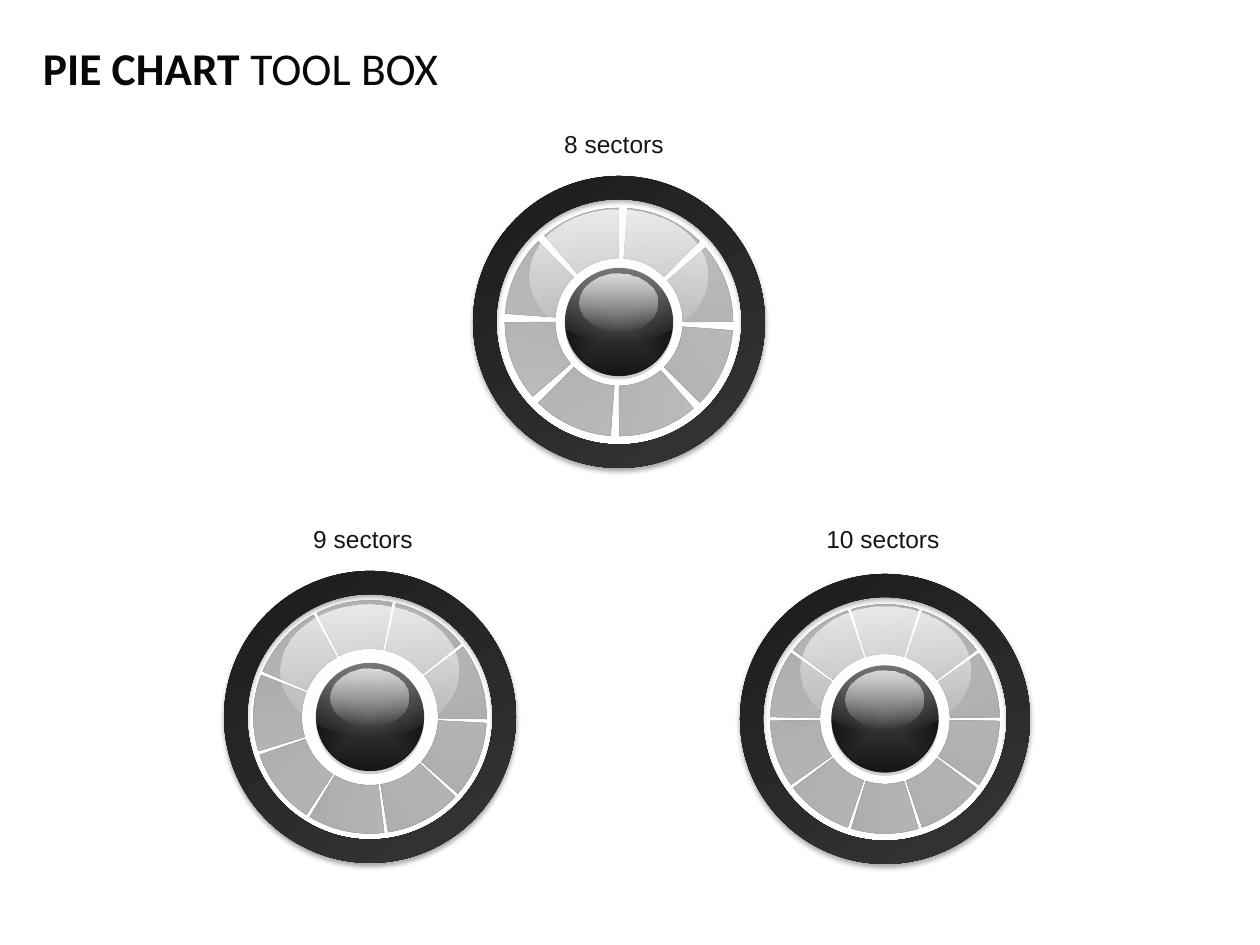
"""Build a slide with three wheels divided into 8, 9 and 10 sectors."""
import lxml.etree
import pptx
import pptx.dml.color
import pptx.enum.shapes
import pptx.enum.text
import pptx.oxml.ns
import pptx.util

PX = 914400 // 126
RGB = pptx.dml.color.RGBColor
SHAPE = pptx.enum.shapes.MSO_SHAPE
QN = pptx.oxml.ns.qn
TITLE_INK = RGB(0x08, 0x08, 0x08)
LABEL_INK = RGB(0x15, 0x16, 0x16)
RING = (RGB(0x17, 0x17, 0x17), RGB(0x3A, 0x3A, 0x3A))
SECTOR = (RGB(0xC1, 0xC2, 0xC4), RGB(0xA0, 0xA2, 0xA4))
HUB = (RGB(0x35, 0x36, 0x37), RGB(0x15, 0x16, 0x16))
HUB_LINE = RGB(0x19, 0x19, 0x19)
GLOSS = (RGB(0xFF, 0xFF, 0xFF), RGB(0xFF, 0xFC, 0xF9))


def add_gradient_shape(shapes, kind, box, colors, angle=90, line=None, width=0.25):
    shape = shapes.add_shape(kind, *(round(value * PX) for value in box))
    shape.shadow.inherit = False
    shape.fill.gradient()
    shape.fill.gradient_angle = angle
    for stop, color in zip(shape.fill.gradient_stops, colors):
        stop.color.rgb = color
    if line is None:
        shape.line.fill.background()
    else:
        shape.line.color.rgb = line
        shape.line.width = pptx.util.Pt(width)
    return shape


def add_shadow(shape, color, blur):
    effects = shape._element.spPr.find(QN("a:effectLst"))
    shadow = lxml.etree.SubElement(
        effects, QN("a:outerShdw"), blurRad=str(pptx.util.Pt(blur)),
        dist=str(pptx.util.Pt(1.8)), dir="5400000", algn="t", rotWithShape="0")
    tint = lxml.etree.SubElement(shadow, QN("a:srgbClr"), val=color)
    lxml.etree.SubElement(tint, QN("a:alpha"), val="35000")


presentation = pptx.Presentation()
presentation.slide_width = 1260 * PX
presentation.slide_height = 945 * PX
slide = presentation.slides.add_slide(presentation.slide_layouts[6])

wheels = [
    (10, 885, 719, 290, 229, 106, 170, 168, 34, 18, 0.216),
    (9, 370, 717, 292, 233, 107, 178, 168, 38, 22, 0.207),
    (8, 619, 322, 292, 228, 107, 178, 125, 40.6, 24.5, 0.22),
]
for (count, center_x, center_y, ring_size, sector_size, hub_size,
     gloss_width, start, sweep, first_middle, thickness) in wheels:
    shapes = slide.shapes.add_group_shape().shapes

    box = (center_x - ring_size / 2, center_y - ring_size / 2, ring_size, ring_size)
    ring = add_gradient_shape(shapes, SHAPE.DONUT, box, RING, angle=0)
    ring.adjustments[0] = 0.08
    ring.rotation = 60
    add_shadow(ring, "000000", 3.1)

    box = (center_x - hub_size / 2, center_y - hub_size / 2, hub_size, hub_size)
    hub = add_gradient_shape(shapes, SHAPE.OVAL, box, HUB, line=HUB_LINE, width=0.75)
    gradient = hub._element.spPr.find(QN("a:gradFill"))
    gradient.remove(gradient.find(QN("a:lin")))
    radial = lxml.etree.SubElement(gradient, QN("a:path"), path="shape")
    lxml.etree.SubElement(radial, QN("a:fillToRect"), l="50000", t="50000", r="50000", b="50000")
    add_shadow(hub, "808080", 0)

    box = (center_x - sector_size / 2, center_y - sector_size / 2, sector_size, sector_size)
    for index in range(count):
        sector = add_gradient_shape(shapes, SHAPE.BLOCK_ARC, box, SECTOR, line=SECTOR[1])
        sector.adjustments[0] = start * 0.6
        sector.adjustments[1] = (start + sweep) * 0.6
        sector.adjustments[2] = thickness
        middle = first_middle + index * 360 / count
        sector.rotation = (middle - start - sweep / 2) % 360

    for width, rise in ((78, 48), (gloss_width, 112)):
        box = (center_x - width / 2, center_y - rise, width, width * 0.74)
        gloss = add_gradient_shape(shapes, SHAPE.OVAL, box, GLOSS)
        stops = gloss._element.spPr.iter(QN("a:gs"))
        for stop, alpha in zip(stops, ("0", "77000")):
            lxml.etree.SubElement(stop[0], QN("a:alpha"), val=alpha)

title = slide.shapes.add_textbox(43 * PX, 26 * PX, 1174 * PX, 83 * PX)
frame = title.text_frame
frame.word_wrap = True
frame.vertical_anchor = pptx.enum.text.MSO_ANCHOR.MIDDLE
frame.margin_left = frame.margin_right = 0
paragraph = frame.paragraphs[0]
paragraph.font.name = "Calibri"
paragraph.font.size = pptx.util.Pt(26)
paragraph.font.color.rgb = TITLE_INK
for text, bold in (("PIE CHART ", True), ("TOOL BOX", False)):
    run = paragraph.add_run()
    run.text = text
    run.font.bold = bold

for text, left, top, width in (
        ("8 sectors", 546, 123, 136),
        ("9 sectors", 295, 518, 136),
        ("10 sectors", 800, 518, 166)):
    label = slide.shapes.add_textbox(left * PX, top * PX, width * PX, 43 * PX)
    label.text_frame.word_wrap = True
    label.text_frame.auto_size = pptx.enum.text.MSO_AUTO_SIZE.SHAPE_TO_FIT_TEXT
    paragraph = label.text_frame.paragraphs[0]
    paragraph.text = text
    paragraph.alignment = pptx.enum.text.PP_ALIGN.CENTER
    paragraph.font.name = "Arial"
    paragraph.font.size = pptx.util.Pt(14)
    paragraph.font.color.rgb = LABEL_INK

presentation.save("out.pptx")
